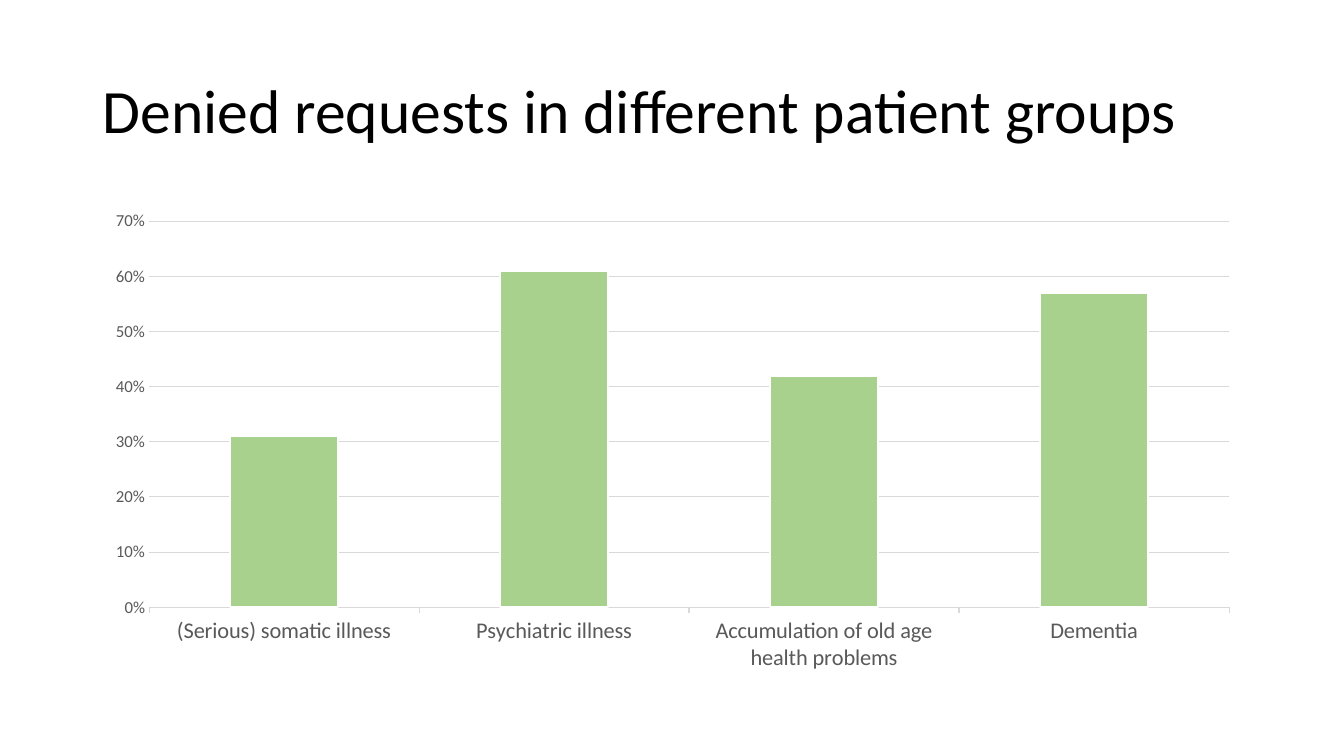
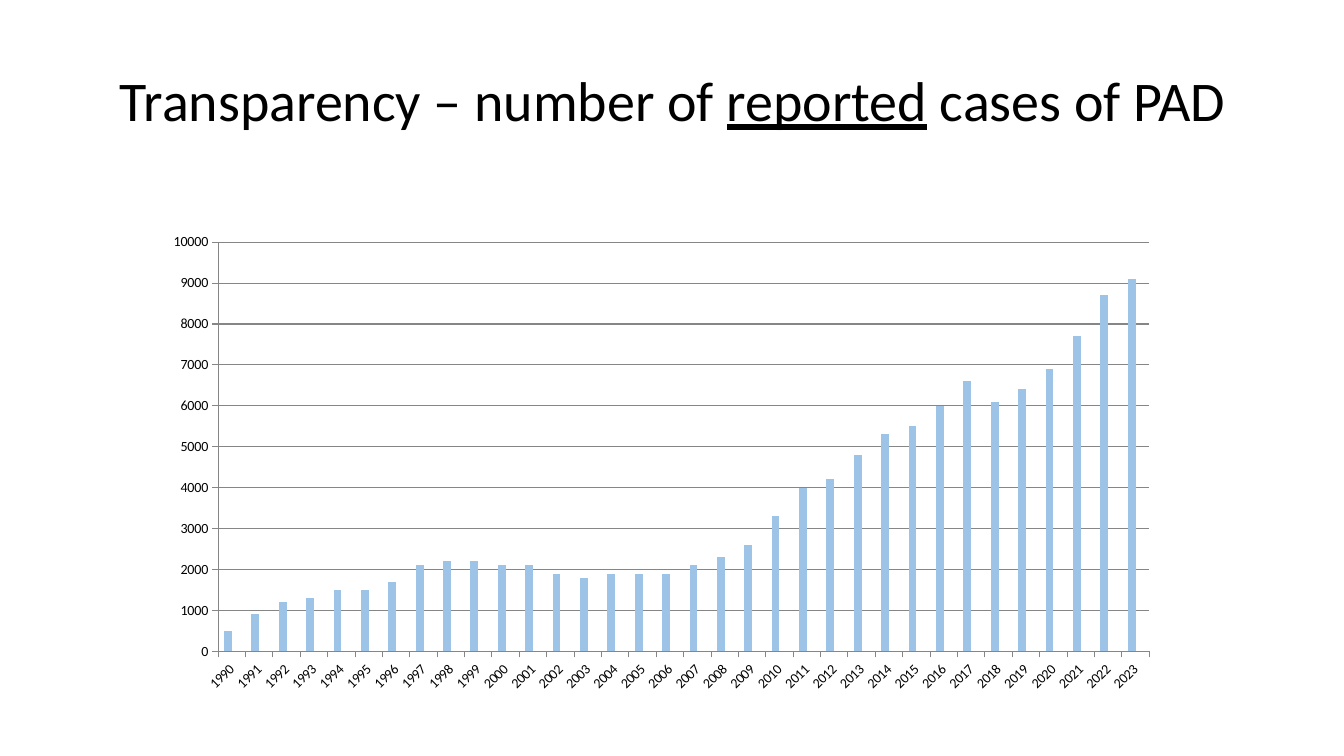
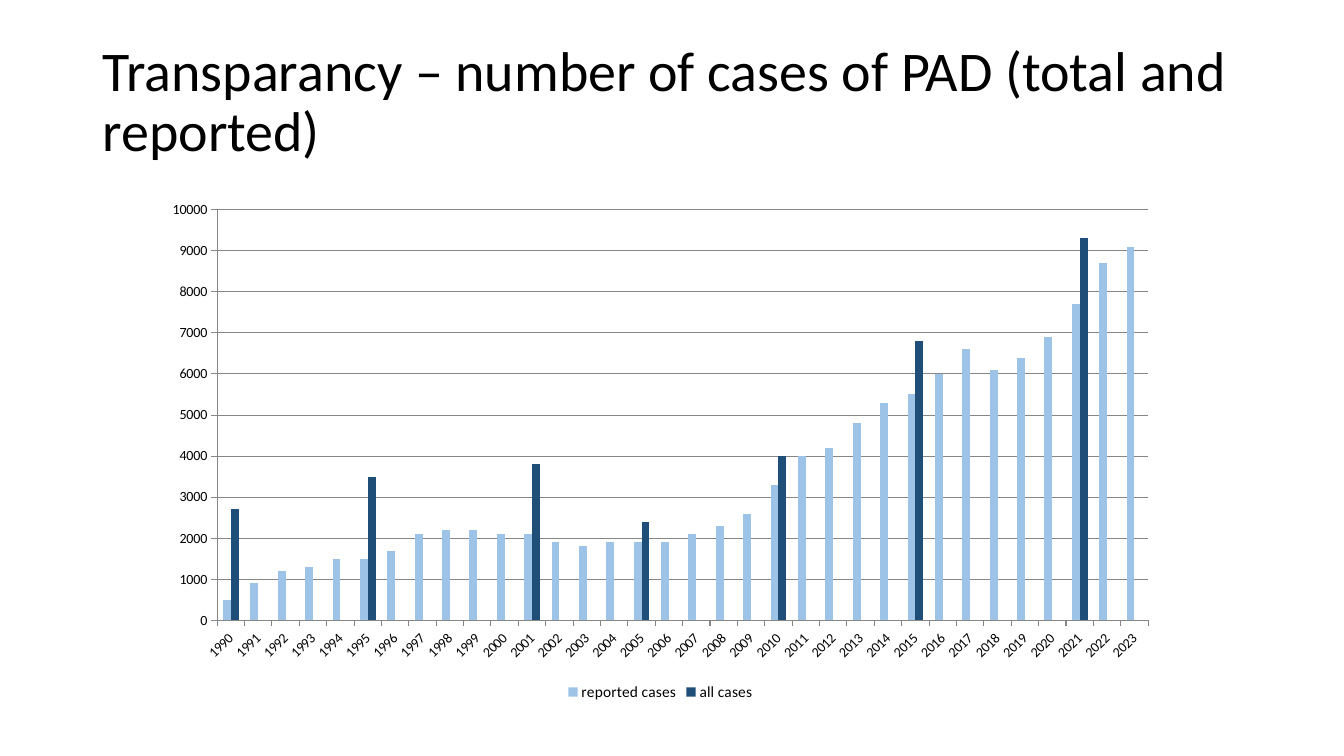
from dataclasses import dataclass
from typing import Optional

from pptx import Presentation
from pptx.chart.axis import _BaseAxis
from pptx.chart.chart import Chart
from pptx.chart.data import CategoryChartData
from pptx.dml.color import RGBColor
from pptx.enum.chart import XL_CHART_TYPE, XL_LEGEND_POSITION, XL_TICK_MARK
from pptx.enum.text import MSO_ANCHOR, PP_ALIGN
from pptx.slide import Slide
from pptx.util import Inches, Pt

FONT = "Calibri"
COLORS = {
    "black": "000000",
    "white": "FFFFFF",
    "label": "595959",
    "pale_line": "D9D9D9",
    "grey_line": "868686",
    "green": "A9D18E",
    "light_blue": "9DC3E6",
    "dark_blue": "1F4E79",
}

YEARS = [str(year) for year in range(1990, 2024)]
REPORTED = [
    500, 900, 1200, 1300, 1500, 1500, 1700, 2100, 2200, 2200, 2100, 2100,
    1900, 1800, 1900, 1900, 1900, 2100, 2300, 2600, 3300, 4000, 4200, 4800,
    5300, 5500, 6000, 6600, 6100, 6400, 6900, 7700, 8700, 9100,
]
SURVEYED = {
    "1990": 2700, "1995": 3500, "2001": 3800, "2005": 2400,
    "2010": 4000, "2015": 6800, "2021": 9300,
}


@dataclass(frozen=True)
class Title:
    text: str
    size: int = 40
    top: float = 0.5
    bottom_inset: float = 0.45
    underlined: str = ""
    align: PP_ALIGN = PP_ALIGN.LEFT


@dataclass(frozen=True)
class Series:
    name: str
    values: list[Optional[float]]
    color: str
    outline: str = ""


@dataclass(frozen=True)
class AxisStyle:
    category_size: int = 10
    value_size: int = 10
    text: str = "black"
    line: str = "grey_line"
    value_line: bool = True
    number_format: str = "General"
    maximum: float = 10000
    step: float = 1000
    rotation: int = -45


@dataclass(frozen=True)
class ChartSlide:
    title: Title
    frame: tuple[float, float, float, float]
    categories: list[str]
    series: list[Series]
    axes: AxisStyle = AxisStyle()
    font_size: int = 18
    legend: bool = False


SLIDES = [
    ChartSlide(
        Title("Denied requests in different patient groups", 44, 0.4, 0.05),
        (0.92, 2, 11.5, 4.76),
        ["(Serious) somatic illness", "Psychiatric illness",
         "Accumulation of old age health problems", "Dementia"],
        [Series("Series 1", [0.31, 0.61, 0.42, 0.57], "green", "white")],
        AxisStyle(16, 12, "label", "pale_line", False, "0%", 0.7, 0.1, 0),
        font_size=10,
    ),
    ChartSlide(
        Title("Transparency – number of reported cases of PAD",
              underlined="reported", align=PP_ALIGN.CENTER),
        (1.52, 2.23, 10.08, 4.73),
        YEARS,
        [Series("Series 1", REPORTED, "light_blue"),
         Series("Series 2", [None] * len(YEARS), "dark_blue")],
    ),
    ChartSlide(
        Title("Transparancy – number of cases of PAD (total and reported)"),
        (1.51, 1.9, 10.08, 5.1),
        YEARS,
        [Series("reported cases", REPORTED, "light_blue"),
         Series("all cases", [SURVEYED.get(year) for year in YEARS], "dark_blue")],
        legend=True,
    ),
]


def rgb(name: str) -> RGBColor:
    return RGBColor.from_string(COLORS[name])


def style_font(font, size: int, color: str) -> None:
    font.name = FONT
    font.size = Pt(size)
    font.color.rgb = rgb(color)


def style_line(line, color: str, width: float = 0.75) -> None:
    line.color.rgb = rgb(color)
    line.width = Pt(width)


def add_title(slide: Slide, title: Title) -> None:
    box = slide.shapes.add_textbox(
        Inches(0.92), Inches(title.top), Inches(11.5), Inches(1.45))
    frame = box.text_frame
    frame.word_wrap = True
    frame.vertical_anchor = MSO_ANCHOR.MIDDLE
    frame.margin_bottom = Inches(title.bottom_inset)
    para = frame.paragraphs[0]
    para.alignment = title.align
    para.line_spacing = 0.9
    parts = title.text.partition(title.underlined) if title.underlined else [title.text]
    for part in parts:
        span = para.add_run()
        span.text = part
        style_font(span.font, title.size, "black")
        if part == title.underlined:
            span.font.underline = True


def style_axis(axis: _BaseAxis, size: int, style: AxisStyle) -> None:
    axis.minor_tick_mark = XL_TICK_MARK.NONE
    axis.major_tick_mark = XL_TICK_MARK.OUTSIDE
    style_font(axis.tick_labels.font, size, style.text)
    style_line(axis.format.line, style.line)


def style_axes(chart: Chart, style: AxisStyle) -> None:
    category, value = chart.category_axis, chart.value_axis
    style_axis(category, style.category_size, style)
    style_axis(value, style.value_size, style)
    if style.rotation:
        body = category._element.txPr.bodyPr
        body.set("rot", str(style.rotation * 60000))
        body.set("vert", "horz")
    if not style.value_line:
        value.format.line.fill.background()
        value.major_tick_mark = XL_TICK_MARK.NONE
    value.minimum_scale = 0
    value.maximum_scale = style.maximum
    value.major_unit = style.step
    value.tick_labels.number_format = style.number_format
    value.tick_labels.number_format_is_linked = False
    value.has_major_gridlines = True
    style_line(value.major_gridlines.format.line, style.line)


def add_column_chart(slide: Slide, content: ChartSlide) -> None:
    data = CategoryChartData(number_format=content.axes.number_format)
    data.categories = content.categories
    for series in content.series:
        data.add_series(series.name, series.values)
    chart = slide.shapes.add_chart(
        XL_CHART_TYPE.COLUMN_CLUSTERED, *map(Inches, content.frame), data).chart
    chart.has_title = False
    style_font(chart.font, content.font_size, "black")
    plot = chart.plots[0]
    plot.gap_width = 150
    plot.overlap = 0
    plot.vary_by_categories = False
    for columns, series in zip(plot.series, content.series):
        columns.format.fill.solid()
        columns.format.fill.fore_color.rgb = rgb(series.color)
        if series.outline:
            style_line(columns.format.line, series.outline, 1.5)
    style_axes(chart, content.axes)
    chart.has_legend = content.legend
    if content.legend:
        chart.legend.position = XL_LEGEND_POSITION.BOTTOM
        chart.legend.include_in_layout = False
        style_font(chart.legend.font, 11, "black")


def main() -> None:
    deck = Presentation()
    deck.slide_width = Inches(13.33)
    deck.slide_height = Inches(7.5)
    for content in SLIDES:
        page = deck.slides.add_slide(deck.slide_layouts[6])
        add_title(page, content.title)
        add_column_chart(page, content)
    deck.save("out.pptx")


if __name__ == "__main__":
    main()
